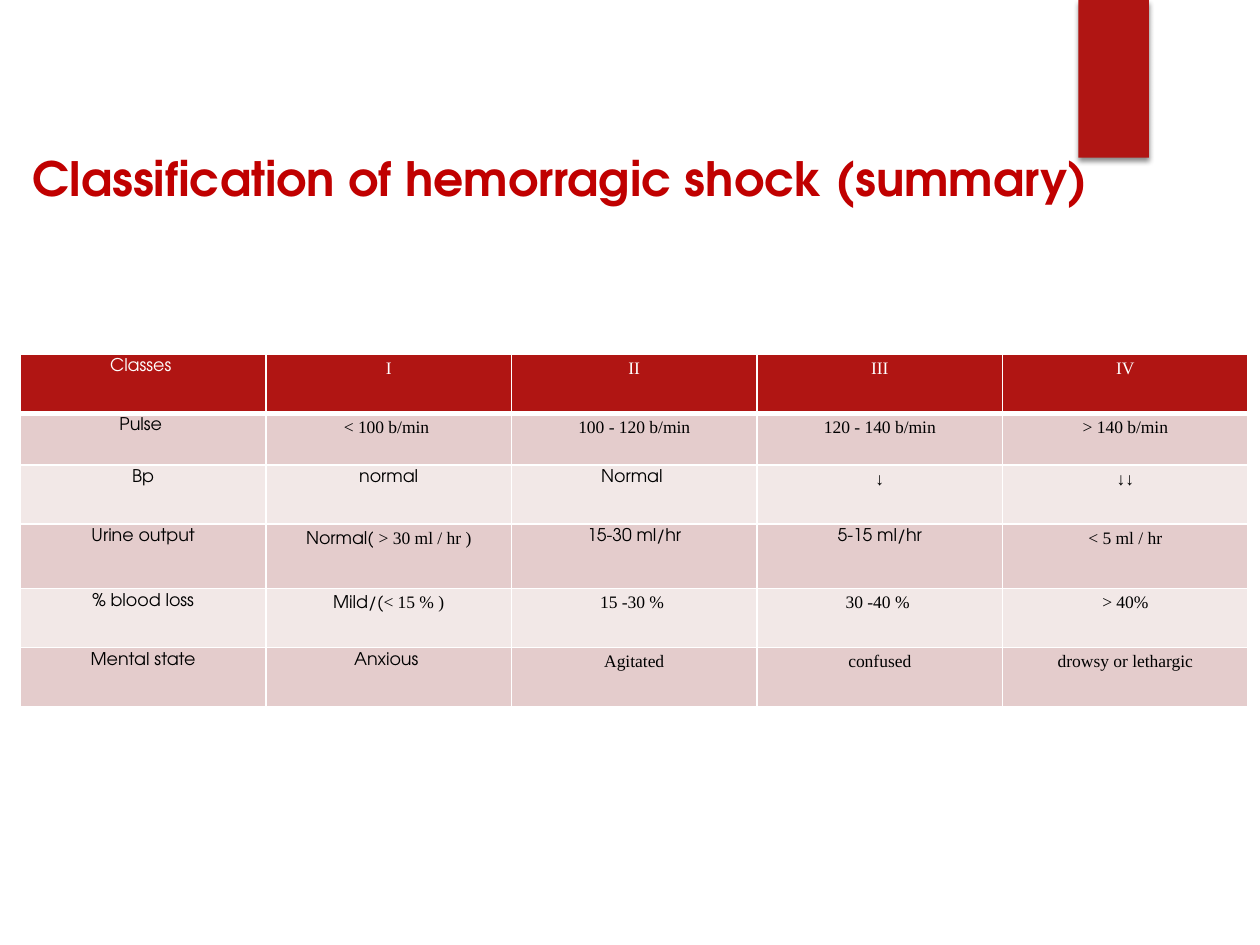
from lxml.etree import SubElement
from pptx import Presentation
from pptx.dml.color import RGBColor
from pptx.enum.shapes import MSO_SHAPE
from pptx.enum.text import MSO_ANCHOR, PP_ALIGN
from pptx.oxml import parse_xml
from pptx.oxml.ns import nsdecls, qn
from pptx.util import Cm, Pt

RED = RGBColor(0xB0, 0x15, 0x13)
TITLE_RED = RGBColor(0xC0, 0x00, 0x00)
ROSE = RGBColor(0xE4, 0xCC, 0xCC)
PALE = RGBColor(0xF2, 0xE8, 0xE7)
WHITE = RGBColor(0xFF, 0xFF, 0xFF)
BLACK = RGBColor(0x00, 0x00, 0x00)

SANS = "TeX Gyre Adventor"
SERIF = "Times New Roman"

# Each cell holds its sans part, then its serif part
CLASSES = [
    [("Classes ", ""), ("", "І"), ("", "ІІ"), ("", "ІІІ"), ("", "ІV")],
    [("Pulse ", ""), ("", "< 100 b/min "), ("", "100 - 120 b/min"),
     ("", "120 - 140 b/min"), ("", "> 140 b/min")],
    [("Bp", ""), ("normal", ""), ("Normal ", ""), ("", "↓"), ("", "↓↓")],
    [("Urine output", ""), ("Normal( ", "> 30 ml / hr )"), ("15-30 ml/hr", ""),
     ("5-15 ml/hr", ""), ("", "< 5 ml / hr")],
    [("% blood loss", ""), ("Mild/(", "< 15 % )"), ("", "15 -30 % "),
     ("", "30 -40 % "), ("", "> 40%")],
    [("Mental state", ""), ("Anxious ", ""), ("", "Agitated"),
     ("", "confused"), ("", "drowsy or lethargic")],
]
ROW_HEIGHTS = [1.19, 1.04, 1.19, 1.3, 1.19, 1.19]
COLUMN_WIDTH = 4.95


def apply_format(target, values):
    for name, value in values.items():
        setattr(target, name, value)


def add_span(para, text, color, **font_values):
    span = para.add_run()
    span.text = text
    apply_format(span.font, font_values)
    span.font.color.rgb = color


def add_ribbon(page):
    ribbon = page.shapes.add_shape(
        MSO_SHAPE.RECTANGLE, Cm(21.74), Cm(0), Cm(1.42), Cm(3.18))
    ribbon.fill.solid()
    ribbon.fill.fore_color.rgb = RED
    ribbon.line.fill.background()
    # Soft shadow below the ribbon
    ribbon.shadow.inherit = False
    effects = ribbon.element.spPr.find(qn("a:effectLst"))
    shadow = SubElement(effects, qn("a:outerShdw"), blurRad=str(Pt(3)),
                        dist=str(Pt(2)), dir="5400000", rotWithShape="0")
    color = SubElement(shadow, qn("a:srgbClr"), val=str(BLACK))
    SubElement(color, qn("a:alpha"), val="45000")


def format_title(page, text):
    title = page.shapes.title
    apply_format(title, {"left": Cm(0.41), "top": Cm(2.9),
                         "width": Cm(22.86), "height": Cm(1.37)})
    apply_format(title.text_frame, {"word_wrap": True,
                                    "vertical_anchor": MSO_ANCHOR.MIDDLE})
    para = title.text_frame.paragraphs[0]
    para.alignment = PP_ALIGN.LEFT
    add_span(para, text, TITLE_RED, name=SANS, size=Pt(27), bold=True)


def set_borders(cell, bottom_width):
    properties = cell._tc.get_or_add_tcPr()
    widths = {"lnL": 1, "lnR": 1, "lnT": 1, "lnB": bottom_width}
    for position, (side, width) in enumerate(widths.items()):
        properties.insert(position, parse_xml(
            f'<a:{side} {nsdecls("a")} w="{Pt(width)}"><a:solidFill>'
            f'<a:srgbClr val="{WHITE}"/></a:solidFill></a:{side}>'))


def fill_cell(cell, parts, fill, color, bottom_width):
    apply_format(cell, {"margin_left": Cm(0.18), "margin_right": Cm(0.18),
                        "margin_top": Cm(0.1), "margin_bottom": Cm(0.1),
                        "vertical_anchor": MSO_ANCHOR.TOP})
    cell.fill.solid()
    cell.fill.fore_color.rgb = fill
    set_borders(cell, bottom_width)
    para = cell.text_frame.paragraphs[0]
    para.alignment = PP_ALIGN.CENTER
    for text, font in zip(parts, (SANS, SERIF)):
        if text:
            add_span(para, text, color, name=font, size=Pt(10), bold=False)


def add_class_table(page):
    columns = len(CLASSES[0])
    table = page.shapes.add_table(
        len(CLASSES), columns, Cm(0.41), Cm(7.14),
        Cm(COLUMN_WIDTH * columns), Cm(sum(ROW_HEIGHTS))).table
    for column in table.columns:
        column.width = Cm(COLUMN_WIDTH)
    for index, (row, height) in enumerate(zip(table.rows, ROW_HEIGHTS)):
        row.height = Cm(height)
        if index == 0:
            look = (RED, WHITE, 3)
        else:
            look = (ROSE if index % 2 else PALE, BLACK, 1)
        for cell, parts in zip(row.cells, CLASSES[index]):
            fill_cell(cell, parts, *look)


def main():
    deck = Presentation()
    deck.slide_width, deck.slide_height = Cm(25.4), Cm(19.05)
    page = deck.slides.add_slide(deck.slide_layouts[5])
    add_ribbon(page)
    add_class_table(page)
    format_title(page, "Classification of hemorragic shock (summary)")
    deck.save("out.pptx")


if __name__ == "__main__":
    main()
